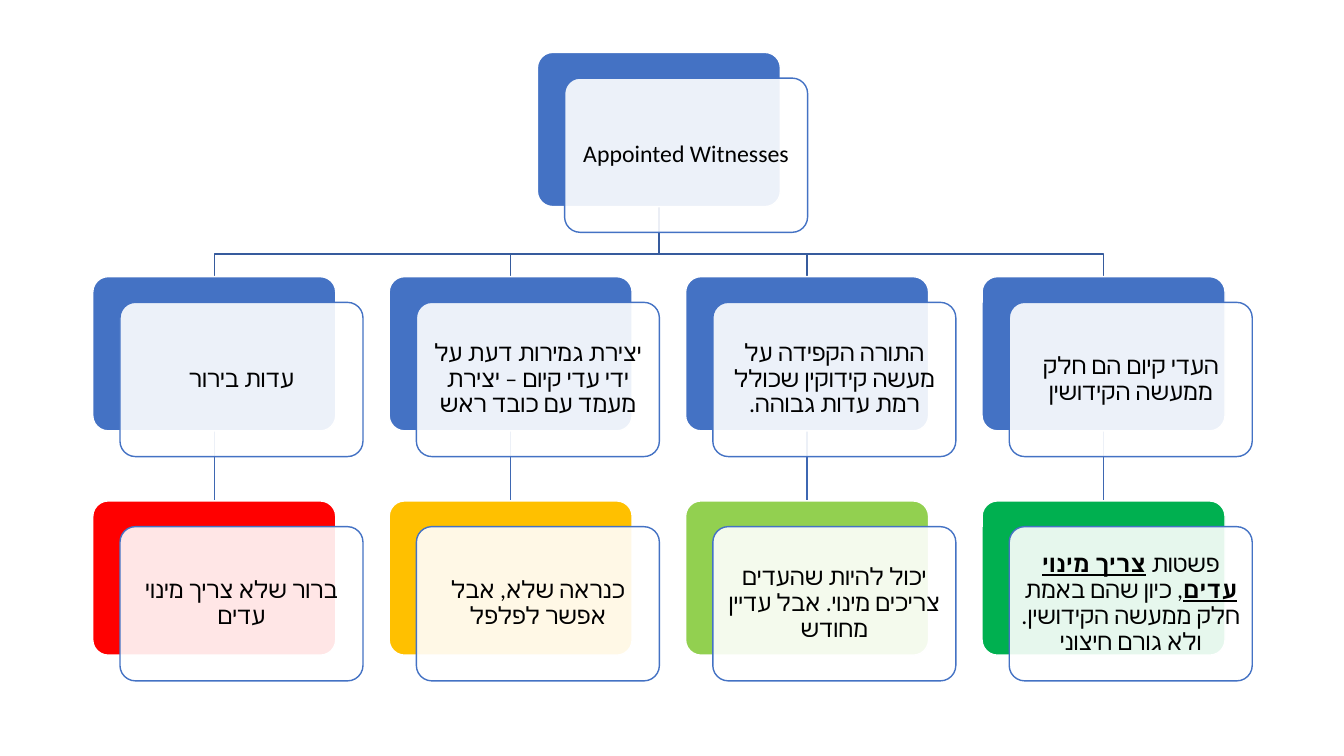
import pptx
import pptx.dml.color
import pptx.enum.shapes
import pptx.enum.text
import pptx.oxml.ns
import pptx.util
from lxml import etree

Inches = pptx.util.Inches
RGBColor = pptx.dml.color.RGBColor
SHAPES = pptx.enum.shapes.MSO_SHAPE
qn = pptx.oxml.ns.qn

BLUE = RGBColor(0x44, 0x72, 0xC4)
BRANCH_BLUE = RGBColor(0x36, 0x5B, 0x9D)
DROP_BLUE = RGBColor(0x3E, 0x67, 0xB2)
RED = RGBColor(0xFF, 0x00, 0x00)
AMBER = RGBColor(0xFF, 0xC0, 0x00)
LIGHT_GREEN = RGBColor(0x92, 0xD0, 0x50)
GREEN = RGBColor(0x00, 0xB0, 0x50)
WHITE = RGBColor(0xFF, 0xFF, 0xFF)
BLACK = RGBColor(0x00, 0x00, 0x00)

CARD_WIDTH, CARD_HEIGHT = 2.41, 1.53
FIRST_LEFT, FIRST_TOP = 0.92, 0.52
COLUMN_STEP, ROW_STEP = 2.94, 2.225
FRONT_SHIFT_X, FRONT_SHIFT_Y = 0.27, 0.255
TEXT_MARGIN = 0.045
BRANCH_DROP = 0.47
ROOT_COLUMN = 1.5

# Each branch: the kind of testimony, the colour of its ruling, the ruling's runs.
BRANCHES = [
    ("עדות בירור", RED, [("ברור שלא צריך מינוי עדים", False)]),
    ("יצירת גמירות דעת על ידי עדי קיום – יצירת מעמד עם כובד ראש",
     AMBER, [("כנראה שלא, אבל אפשר לפלפל", False)]),
    ("התורה הקפידה על מעשה קידוקין שכולל רמת עדות גבוהה.",
     LIGHT_GREEN, [("יכול להיות שהעדים צריכים מינוי. אבל עדיין מחודש", False)]),
    ("העדי קיום הם חלק ממעשה הקידושין", GREEN,
     [("פשטות ", False), ("צריך מינוי עדים", True),
      (", כיון שהם באמת חלק ממעשה הקידושין. ולא גורם חיצוני", False)]),
]


def add_run(paragraph, text, size=17, font="Calibri", color=BLACK, emphasis=False):
    run = paragraph.add_run()
    run.text = text
    run.font.size = pptx.util.Pt(size)
    run.font.bold = emphasis
    run.font.underline = emphasis
    run.font.color.rgb = color
    run.font.name = font
    # Hebrew uses the complex-script typeface.
    etree.SubElement(run.font._element, qn("a:cs")).set("typeface", font)


def card_left(column):
    return FIRST_LEFT + column * COLUMN_STEP


def card_center(column):
    return card_left(column) + CARD_WIDTH / 2


def card_top(row):
    return FIRST_TOP + row * ROW_STEP


class HierarchySlide:
    def __init__(self, slide):
        self.slide = slide
        self.line_width = pptx.util.Pt(1)

    def style_line(self, shape, color):
        shape.line.color.rgb = color
        shape.line.width = self.line_width

    def panel(self, left, top, fill, line, opacity=None):
        shape = self.slide.shapes.add_shape(
            SHAPES.ROUNDED_RECTANGLE, Inches(left), Inches(top),
            Inches(CARD_WIDTH), Inches(CARD_HEIGHT))
        shape.adjustments[0] = 0.1
        shape.shadow.inherit = False
        shape.fill.solid()
        shape.fill.fore_color.rgb = fill
        self.style_line(shape, line)
        if opacity is not None:
            color = shape._element.spPr.find(qn("a:solidFill"))[0]
            etree.SubElement(color, qn("a:alpha")).set("val", str(opacity * 1000))

    def label(self, left, top, runs):
        box = self.slide.shapes.add_textbox(
            Inches(left + TEXT_MARGIN), Inches(top + TEXT_MARGIN),
            Inches(CARD_WIDTH - 2 * TEXT_MARGIN), Inches(CARD_HEIGHT - 2 * TEXT_MARGIN))
        frame = box.text_frame
        frame.word_wrap = True
        frame.vertical_anchor = pptx.enum.text.MSO_ANCHOR.MIDDLE
        frame.margin_left = frame.margin_right = Inches(0.07)
        frame.margin_top = frame.margin_bottom = Inches(0.07)
        paragraph = frame.paragraphs[0]
        paragraph.alignment = pptx.enum.text.PP_ALIGN.CENTER
        paragraph.line_spacing = 0.9
        paragraph._p.get_or_add_pPr().set("rtl", "1")
        for text, emphasis in runs:
            add_run(paragraph, text, emphasis=emphasis)

    def card(self, column, row, color, runs):
        left, top = card_left(column), card_top(row)
        self.panel(left, top, color, WHITE)
        left, top = left + FRONT_SHIFT_X, top + FRONT_SHIFT_Y
        self.panel(left, top, WHITE, BLUE, opacity=90)
        self.label(left, top, runs)

    def branch(self, column):
        """Draw the elbow from the root card to a card in the second row."""
        start_x, end_x = Inches(card_center(ROOT_COLUMN)), Inches(card_center(column))
        start_y = Inches(card_top(0) + CARD_HEIGHT)
        bend_y = start_y + Inches(BRANCH_DROP)
        builder = self.slide.shapes.build_freeform(start_x, start_y)
        builder.add_line_segments(
            [(start_x, bend_y), (end_x, bend_y), (end_x, Inches(card_top(1)))],
            close=False)
        shape = builder.convert_to_shape()
        shape.shadow.inherit = False
        shape.fill.background()
        self.style_line(shape, BRANCH_BLUE)

    def drop(self, column):
        """Draw the straight line from the second row to the third."""
        center = Inches(card_center(column))
        connector = self.slide.shapes.add_connector(
            pptx.enum.shapes.MSO_CONNECTOR.STRAIGHT, center,
            Inches(card_top(1) + CARD_HEIGHT), center, Inches(card_top(2)))
        self.style_line(connector, DROP_BLUE)
        etree.SubElement(connector._element.spPr, qn("a:effectLst"))


def main():
    presentation = pptx.Presentation()
    presentation.slide_width = Inches(13.33)
    presentation.slide_height = Inches(7.5)
    blank_layout = presentation.slide_layouts[6]
    hierarchy = HierarchySlide(presentation.slides.add_slide(blank_layout))

    for column in reversed(range(len(BRANCHES))):
        hierarchy.drop(column)
        hierarchy.branch(column)
    hierarchy.card(ROOT_COLUMN, 0, BLUE, [("Appointed Witnesses", False)])
    for column, (testimony, color, ruling) in enumerate(BRANCHES):
        hierarchy.card(column, 1, BLUE, [(testimony, False)])
        hierarchy.card(column, 2, color, ruling)
    presentation.save("out.pptx")


if __name__ == "__main__":
    main()
